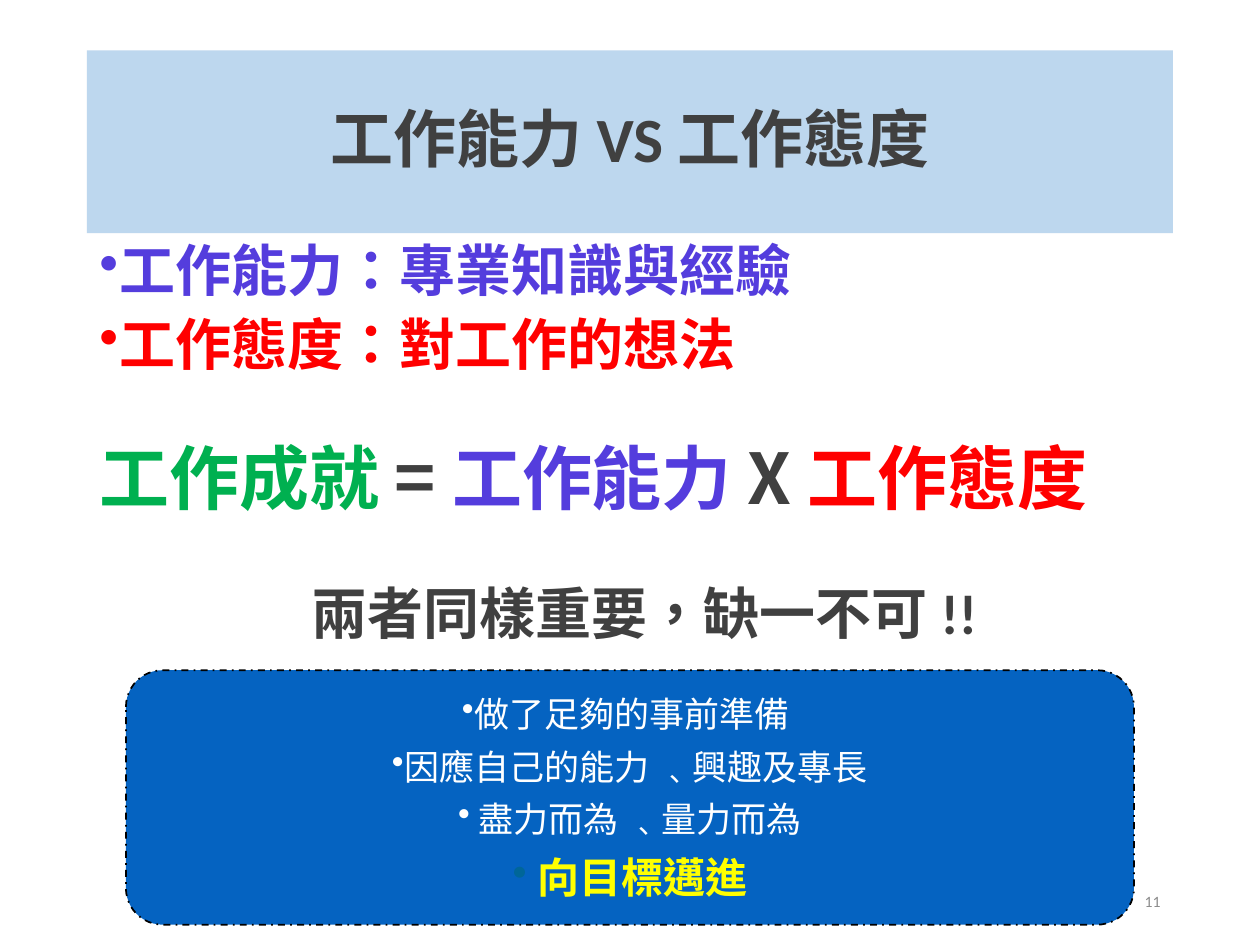
from dataclasses import dataclass

import pptx
import pptx.dml.color
import pptx.enum.dml
import pptx.enum.lang
import pptx.enum.shapes
import pptx.enum.text
import pptx.oxml
import pptx.util

Pt = pptx.util.Pt
RGBColor = pptx.dml.color.RGBColor
Align = pptx.enum.text.PP_ALIGN
Anchor = pptx.enum.text.MSO_ANCHOR

PALE_BLUE = RGBColor(0xBD, 0xD7, 0xEE)
DARK_GREY = RGBColor(0x40, 0x40, 0x40)
VIOLET = RGBColor(0x54, 0x3D, 0xDD)
RED = RGBColor(0xFF, 0x00, 0x00)
GREEN = RGBColor(0x00, 0xB0, 0x50)
PANEL_BLUE = RGBColor(0x05, 0x63, 0xC1)
TEAL = RGBColor(0x00, 0x66, 0x99)
YELLOW = RGBColor(0xFF, 0xFF, 0x00)
WHITE = RGBColor(0xFF, 0xFF, 0xFF)
BLACK = RGBColor(0x00, 0x00, 0x00)
PAGE_GREY = RGBColor(0x8C, 0x8C, 0x8C)

SIDE = 49.7
CONTENT_WIDTH = 720 - 2 * SIDE


@dataclass(frozen=True)
class Piece:
    text: str
    color: RGBColor
    bold: bool = False


@dataclass(frozen=True)
class Line:
    pieces: tuple[Piece, ...]
    size: float
    font: str = "Calibri"
    space_before: float = 7.5
    bullet: bool = False
    left: float = 0
    hanging: float = 0


DEFINITIONS = [
    Line((Piece("工作能力：專業知識與經驗", VIOLET, True),), 32,
         bullet=True, left=7.2, hanging=7.2),
    Line((Piece("工作態度：對工作的想法", RED, True),), 32,
         bullet=True, left=7.2, hanging=7.2),
    Line((Piece("工作成就 ", GREEN, True), Piece("= ", DARK_GREY, True),
          Piece("工作能力 ", VIOLET, True), Piece("X ", DARK_GREY, True),
          Piece("工作態度", RED, True)), 40, "Noto Sans CJK SC", 38),
    Line((Piece("兩者同樣重要，缺一不可 !!", DARK_GREY, True),), 32,
         space_before=38, left=121),
]

ADVICE = [
    Line((Piece(text, WHITE),), 20, "Arial", 6, bullet=True)
    for text in ("做了足夠的事前準備 ", "因應自己的能力 ﹑興趣及專長", " 盡力而為 ﹑量力而為")
] + [
    Line((Piece(" ", TEAL), Piece("向目標邁進", YELLOW, True)), 24, "Arial", 7, bullet=True),
]


def add_text(paragraph, text: str, *, size: float, color: RGBColor,
             font: str = "Calibri", bold: bool = False) -> None:
    run = paragraph.add_run()
    run.text = text
    run.font.name = font
    run.font.size = Pt(size)
    run.font.bold = bold
    run.font.color.rgb = color
    run.font.language_id = pptx.enum.lang.MSO_LANGUAGE_ID.TRADITIONAL_CHINESE


def add_bullet(paragraph) -> None:
    properties = paragraph._p.get_or_add_pPr()
    bullet = properties.makeelement(pptx.oxml.ns.qn("a:buChar"), {"char": "•"})
    properties.append(bullet)


def write_lines(frame, lines: list[Line], align: Align, line_spacing: float = 1.0) -> None:
    for index, line in enumerate(lines):
        paragraph = frame.add_paragraph() if index else frame.paragraphs[0]
        paragraph.alignment = align
        paragraph.line_spacing = line_spacing
        paragraph.space_before = Pt(line.space_before)
        properties = paragraph._p.get_or_add_pPr()
        properties.set("marL", str(Pt(line.left)))
        properties.set("indent", str(-Pt(line.hanging)))
        if line.bullet:
            add_bullet(paragraph)
        for piece in line.pieces:
            add_text(paragraph, piece.text, size=line.size, color=piece.color,
                     font=line.font, bold=piece.bold)


def place(shape, left: float, top: float, width: float, height: float) -> None:
    shape.left, shape.top = Pt(left), Pt(top)
    shape.width, shape.height = Pt(width), Pt(height)


def add_box(slide, left: float, top: float, width: float, height: float, anchor: Anchor):
    box = slide.shapes.add_textbox(Pt(left), Pt(top), Pt(width), Pt(height))
    box.text_frame.word_wrap = True
    box.text_frame.vertical_anchor = anchor
    return box.text_frame


def format_title(slide) -> None:
    title = slide.shapes.title
    place(title, SIDE, 28.8, CONTENT_WIDTH, 104.4)
    title.fill.solid()
    title.fill.fore_color.rgb = PALE_BLUE
    title.text_frame.vertical_anchor = Anchor.MIDDLE
    heading = Line((Piece("工作能力 VS 工作態度", DARK_GREY, True),), 36, space_before=0)
    write_lines(title.text_frame, [heading], Align.CENTER, 0.9)


def add_advice_panel(slide) -> None:
    panel = slide.shapes.add_shape(pptx.enum.shapes.MSO_SHAPE.ROUNDED_RECTANGLE,
                                   Pt(72), Pt(383), Pt(576), Pt(145.4))
    panel.adjustments[0] = 0.144
    panel.shadow.inherit = False
    panel.fill.solid()
    panel.fill.fore_color.rgb = PANEL_BLUE
    panel.line.color.rgb = BLACK
    panel.line.width = Pt(1)
    panel.line.dash_style = pptx.enum.dml.MSO_LINE.DASH_DOT
    panel.text_frame.word_wrap = False
    panel.text_frame.vertical_anchor = Anchor.MIDDLE
    write_lines(panel.text_frame, ADVICE, Align.CENTER)


def main() -> None:
    presentation = pptx.Presentation()
    presentation.slide_width, presentation.slide_height = Pt(720), Pt(540)
    slide = presentation.slides.add_slide(presentation.slide_layouts[5])
    format_title(slide)
    body = add_box(slide, SIDE, 135.4, CONTENT_WIDTH, 307.4, Anchor.TOP)
    write_lines(body, DEFINITIONS, Align.LEFT, 0.9)
    add_advice_panel(slide)
    page_number = add_box(slide, 508.3, 500.4, 162, 28.8, Anchor.MIDDLE)
    number = Line((Piece("11", PAGE_GREY),), 9, space_before=0)
    write_lines(page_number, [number], Align.RIGHT)
    presentation.save("out.pptx")


if __name__ == "__main__":
    main()
